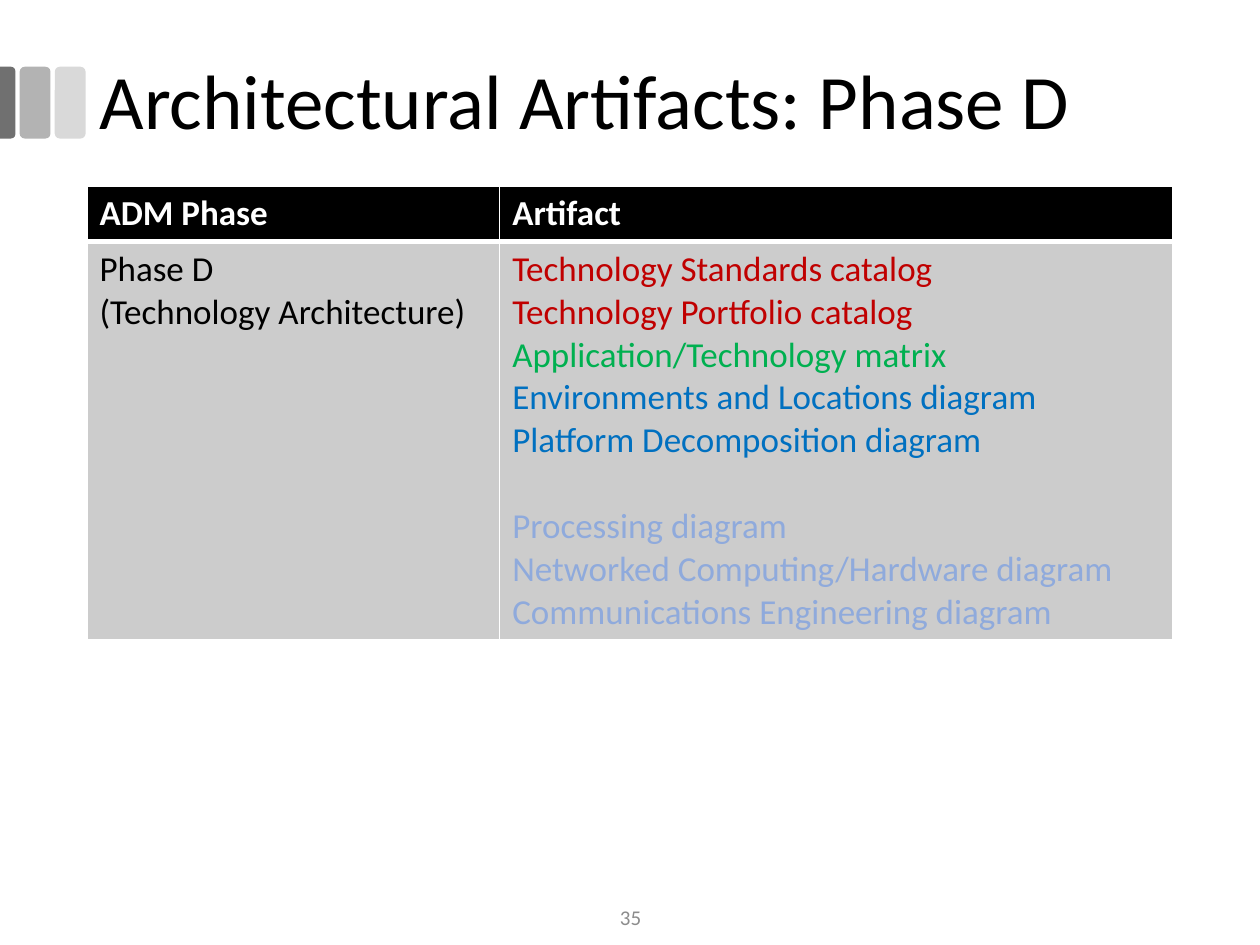
from lxml.etree import SubElement
from pptx import Presentation
from pptx.dml.color import RGBColor
from pptx.enum.shapes import MSO_SHAPE
from pptx.enum.text import MSO_ANCHOR, PP_ALIGN
from pptx.oxml import parse_xml
from pptx.oxml.ns import nsdecls, qn
from pptx.util import Inches, Pt

WIDE, HIGH = Inches(10), Inches(7.5)
FONT = "Calibri"
BLACK = RGBColor(0, 0, 0)
WHITE = RGBColor(255, 255, 255)
PALE = RGBColor(0xD9, 0xD9, 0xD9)
MID = RGBColor(0xB3, 0xB3, 0xB3)
DARK = RGBColor(0x70, 0x70, 0x70)
GRAY = RGBColor(0xCC, 0xCC, 0xCC)
DIM = RGBColor(0x8C, 0x8C, 0x8C)
RED = RGBColor(0xC0, 0, 0)
GREEN = RGBColor(0, 0xB0, 0x50)
BLUE = RGBColor(0, 0x70, 0xC0)
SKY = RGBColor(0x8F, 0xAA, 0xDC)

HEADS = ["ADM Phase", "Artifact"]
PHASE = [("Phase D", BLACK), ("(Technology Architecture)", BLACK)]
CORE = [
    ("Technology Standards catalog", RED),
    ("Technology Portfolio catalog", RED),
    ("Application/Technology matrix", GREEN),
    ("Environments and Locations diagram", BLUE),
    ("Platform Decomposition diagram", BLUE),
]
EXTRA = [
    ("Processing diagram", SKY),
    ("Networked Computing/Hardware diagram", SKY),
    ("Communications Engineering diagram", SKY),
]


def share(box, x, y, w, h):
    """Return the part of a box given by shares of its width and height."""
    left, top, wide, high = box
    return (int(left + x * wide), int(top + y * high),
            int(w * wide), int(h * high))


def write(para, text, size, color, bold=False):
    """Add one formatted run to a paragraph."""
    run = para.add_run()
    run.text = text
    font = run.font
    font.name, font.size, font.bold = FONT, Pt(size), bold
    font.color.rgb = color


def fill_text(frame, lines, bold=False):
    """Write colored lines, one paragraph each, and return the paragraphs."""
    paras = [frame.paragraphs[0]]
    paras += [frame.add_paragraph() for _ in lines[1:]]
    for para, (text, color) in zip(paras, lines):
        write(para, text, 20, color, bold)
    return paras


def add_bar(slide, kind, box, color):
    """Add one plain bar."""
    bar = slide.shapes.add_shape(kind, *box)
    bar.shadow.inherit = False
    bar.fill.solid()
    bar.fill.fore_color.rgb = color
    bar.line.fill.background()
    return bar


def add_bars(slide, box):
    """Place the three bars, the last one cut flat by the slide's edge."""
    for x, color in ((0.64, PALE), (0.23, MID)):
        add_bar(slide, MSO_SHAPE.ROUNDED_RECTANGLE,
                share(box, x, 0, 0.36, 1), color)
    left, top, wide, high = share(box, 0, 0, 0.18, 1)
    turn = (left + (wide - high) // 2, top + (high - wide) // 2, high, wide)
    edge = add_bar(slide, MSO_SHAPE.ROUND_2_SAME_RECTANGLE, turn, DARK)
    edge.rotation = 90
    edge.adjustments[0] = 0.29


def add_title(slide, box):
    """Place and format the title."""
    title = slide.shapes.title
    title.left, title.top, title.width, title.height = box
    frame = title.text_frame
    frame.word_wrap = True
    frame.vertical_anchor = MSO_ANCHOR.MIDDLE
    para = frame.paragraphs[0]
    para.alignment = PP_ALIGN.LEFT
    para.line_spacing = 0.9
    write(para, "Architectural Artifacts: Phase D", 44, BLACK)


def style_cell(cell, color, top, base):
    """Give a cell its fill and white borders."""
    props = cell._tc.get_or_add_tcPr()
    for side, width in (("L", 1), ("R", 1), ("T", top), ("B", base)):
        line = parse_xml(f'<a:ln{side} {nsdecls("a")} w="{Pt(width)}"/>')
        fill = SubElement(line, qn("a:solidFill"))
        SubElement(fill, qn("a:srgbClr"), val=str(WHITE))
        props.append(line)
    cell.fill.solid()
    cell.fill.fore_color.rgb = color


def add_grid(slide, box):
    """Place the table of phases and artifacts."""
    left, top, wide, high = box
    table = slide.shapes.add_table(2, 2, *box).table
    for col, part in zip(table.columns, (0.38, 0.62)):
        col.width = int(wide * part)
    for row, part in zip(table.rows, (0.12, 0.88)):
        row.height = int(high * part)
    for col, head in enumerate(HEADS):
        cell = table.cell(0, col)
        style_cell(cell, BLACK, 1, 3)
        fill_text(cell.text_frame, [(head, WHITE)], True)
    for col, lines in enumerate((PHASE, CORE + EXTRA)):
        cell = table.cell(1, col)
        style_cell(cell, GRAY, 3, 1)
        paras = fill_text(cell.text_frame, lines)
        if col == 1:
            paras[len(CORE)].space_before = Pt(24.4)


def add_number(slide, box):
    """Place the page number."""
    frame = slide.shapes.add_textbox(*box).text_frame
    frame.word_wrap = True
    frame.vertical_anchor = MSO_ANCHOR.MIDDLE
    para = frame.paragraphs[0]
    para.alignment = PP_ALIGN.CENTER
    write(para, "35", 12, DIM)


def main():
    """Build the slide and save it."""
    deck = Presentation()
    deck.slide_width, deck.slide_height = WIDE, HIGH
    slide = deck.slides.add_slide(deck.slide_layouts[5])
    page = (0, 0, WIDE, HIGH)
    add_bars(slide, (0, Inches(0.53), Inches(0.68), Inches(0.57)))
    add_title(slide, share(page, 0.069, 0.023, 0.862, 0.175))
    add_grid(slide, share(page, 0.069, 0.197, 0.862, 0.478))
    add_number(slide, share(page, 0.388, 0.944, 0.225, 0.053))
    deck.save("out.pptx")


if __name__ == "__main__":
    main()
